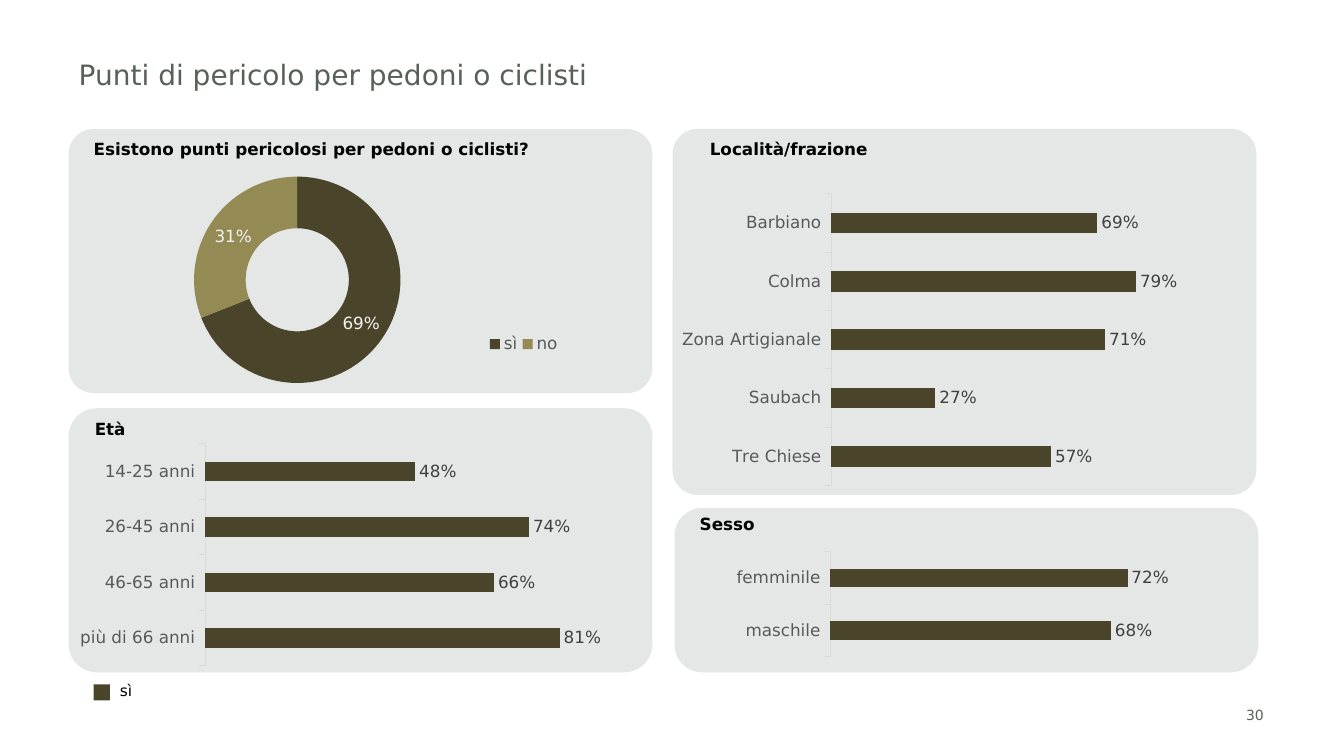
from dataclasses import dataclass

from lxml.etree import SubElement
from pptx import Presentation
from pptx.chart.data import CategoryChartData
from pptx.dml.color import RGBColor
from pptx.enum.chart import XL_CHART_TYPE as CT, XL_LABEL_POSITION as LP
from pptx.enum.chart import XL_LEGEND_POSITION as LEG, XL_TICK_MARK as TICK
from pptx.enum.shapes import MSO_SHAPE as SHAPE
from pptx.enum.text import MSO_ANCHOR as ANCHOR, PP_ALIGN as ALIGN
from pptx.oxml import parse_xml
from pptx.oxml.ns import nsdecls, qn
from pptx.util import Inches, Pt

TITLE = "Punti di pericolo per pedoni o ciclisti"
PAGE = "30"
KEY = "sì"

# (left, top, width, height), corner
PANELS = [
    ((6.67, 1.28, 5.79, 3.63), 0.068),
    ((0.68, 1.28, 5.79, 2.62), 0.095),
    ((0.68, 4.05, 5.79, 2.62), 0.107),
    ((6.69, 5.04, 5.79, 1.63), 0.167),
]
HEADINGS = [
    ("Esistono punti pericolosi per pedoni o ciclisti?", (0.93, 1.38, 5.54, 0.22)),
    ("Località/frazione", (7.04, 1.38, 5.09, 0.22)),
    ("Età", (0.94, 4.15, 5.54, 0.22)),
    ("Sesso", (6.94, 5.1, 5.54, 0.35)),
]
ANSWERS = {
    "data": {"sì": 0.69, "no": 0.31},
    "box": (-0.37, 1.53, 6.47, 2.37),
    "plot": (0.135, 0.094, 0.756, 0.864),
    "legend": (0.8, 0.67, 0.12, 0.25),
}
BAR_CHARTS = [
    {
        "data": {"Tre Chiese": 0.57, "Saubach": 0.27, "Zona Artigianale": 0.71,
                 "Colma": 0.79, "Barbiano": 0.69},
        "box": (6.67, 1.7, 5.79, 3.34),
        "plot": (0.272, 0.067, 0.661, 0.867),
    },
    {
        "data": {"più di 66 anni": 0.81, "46-65 anni": 0.66,
                 "26-45 anni": 0.74, "14-25 anni": 0.48},
        "box": (0.68, 4.37, 5.79, 2.29),
        "plot": (0.234, 0.015, 0.75, 0.962),
    },
    {
        "data": {"maschile": 0.68, "femminile": 0.72},
        "box": (6.69, 5.32, 5.79, 1.35),
        "plot": (0.267, 0.113, 0.707, 0.773),
    },
]


@dataclass(frozen=True)
class Theme:
    font: str = "DejaVu Sans"
    grey: str = "56615A"
    dark: str = "4A452A"
    olive: str = "948A54"
    black: str = "000000"
    axis_text: str = "595959"
    axis_line: str = "D9D9D9"
    bar_label: str = "404040"
    ring_label: str = "F2F2F2"
    title_size: int = 20
    body_size: int = 12
    key_size: int = 11
    small_size: int = 10


T = Theme()


def rgb(value):
    return RGBColor.from_string(value)


def inches(box):
    return [Inches(v) for v in box]


def set_all(obj, **values):
    for name, value in values.items():
        setattr(obj, name, value)


def set_font(font, size, color, bold=False):
    set_all(font, name=T.font, size=Pt(size), bold=bold)
    font.color.rgb = rgb(color)


def fill_solid(fill, color):
    fill.solid()
    fill.fore_color.rgb = rgb(color)


def write(sp, text, size, color, bold=False, inset=None, **frame):
    tf = sp.text_frame
    set_all(tf, **{"word_wrap": True, "vertical_anchor": ANCHOR.TOP, **frame})
    if inset is not None:
        for side in ("left", "top", "right", "bottom"):
            setattr(tf, f"margin_{side}", Inches(inset))
    p = tf.paragraphs[0]
    set_all(p, alignment=ALIGN.LEFT, space_before=Pt(0))
    r = p.add_run()
    r.text = text
    set_font(r.font, size, color, bold)


def add_block(s, kind, box, color, opacity=None):
    sp = s.shapes.add_shape(kind, *inches(box))
    sp.shadow.inherit = False
    fill_solid(sp.fill, color)
    sp.line.fill.background()
    if opacity:
        clr = sp._element.spPr.find(".//" + qn("a:srgbClr"))
        SubElement(clr, qn("a:alpha"), val=str(opacity * 1000))
    return sp


def set_layout(parent, index, box, inner=False):
    """Fix the place of a plot area or legend, in fractions of the chart."""
    for old in parent.findall(qn("c:layout")):
        parent.remove(old)
    parts = [("layoutTarget", "inner")] if inner else []
    parts += [("xMode", "edge"), ("yMode", "edge"), *zip("xywh", box)]
    body = "".join(f'<c:{tag} val="{val}"/>' for tag, val in parts)
    parent.insert(index, parse_xml(
        f'<c:layout {nsdecls("c")}><c:manualLayout>{body}</c:manualLayout></c:layout>'))


def add_chart(s, kind, item, label_color):
    data = CategoryChartData(number_format="0%")
    data.categories = list(item["data"])
    data.add_series("Series 1", list(item["data"].values()))
    chart = s.shapes.add_chart(kind, *inches(item["box"]), data).chart
    set_all(chart, has_title=False, has_legend=False)
    set_font(chart.font, T.small_size, T.black)
    set_layout(chart._chartSpace.find(".//" + qn("c:plotArea")), 0, item["plot"], True)
    plot = chart.plots[0]
    plot.has_data_labels = True
    labels = plot.data_labels
    set_all(labels, show_value=True, show_percentage=False,
            number_format="0%", number_format_is_linked=False)
    set_font(labels.font, T.body_size, label_color)
    return chart


def add_ring(s, item):
    chart = add_chart(s, CT.DOUGHNUT, item, T.ring_label)
    for i, color in enumerate((T.dark, T.olive)):
        fill_solid(chart.plots[0].series[0].points[i].format.fill, color)
    chart.has_legend = True
    legend = chart.legend
    set_all(legend, position=LEG.RIGHT, include_in_layout=False)
    set_font(legend.font, T.body_size, T.axis_text)
    set_layout(legend._element, 1, item["legend"])


def add_bars(s, item):
    chart = add_chart(s, CT.BAR_CLUSTERED, item, T.bar_label)
    plot = chart.plots[0]
    set_all(plot, gap_width=182, vary_by_categories=False)
    plot.data_labels.position = LP.OUTSIDE_END
    fill_solid(plot.series[0].format.fill, T.dark)
    set_all(chart.value_axis, visible=False, has_major_gridlines=False,
            minimum_scale=0, maximum_scale=1)
    axis = chart.category_axis
    set_all(axis, major_tick_mark=TICK.OUTSIDE, has_major_gridlines=False)
    set_font(axis.tick_labels.font, T.body_size, T.axis_text)
    axis.format.line.color.rgb = rgb(T.axis_line)
    axis.format.line.width = Pt(0.75)


def main():
    prs = Presentation()
    set_all(prs, slide_width=Inches(13.33), slide_height=Inches(7.5))
    s = prs.slides.add_slide(prs.slide_layouts[5])
    title = s.shapes.title
    set_all(title, **dict(zip(("left", "top", "width", "height"),
                              inches((0.68, 0.52, 11.1, 0.39)))))
    write(title, TITLE, T.title_size, T.grey)

    for box, corner in PANELS:
        add_block(s, SHAPE.ROUNDED_RECTANGLE, box, T.grey, 15).adjustments[0] = corner
    add_ring(s, ANSWERS)
    for item in BAR_CHARTS:
        add_bars(s, item)
    for text, box in HEADINGS:
        write(s.shapes.add_textbox(*inches(box)), text, T.body_size, T.black, True, 0)

    add_block(s, SHAPE.RECTANGLE, (0.93, 6.79, 0.16, 0.16), T.dark)
    write(s.shapes.add_textbox(*inches((1.09, 6.71, 0.32, 0.29))), KEY,
          T.key_size, T.black, word_wrap=False)
    write(s.shapes.add_textbox(*inches((12.26, 6.9, 0.72, 0.38))), PAGE,
          T.small_size, T.grey, vertical_anchor=ANCHOR.MIDDLE)
    prs.save("out.pptx")


if __name__ == "__main__":
    main()
